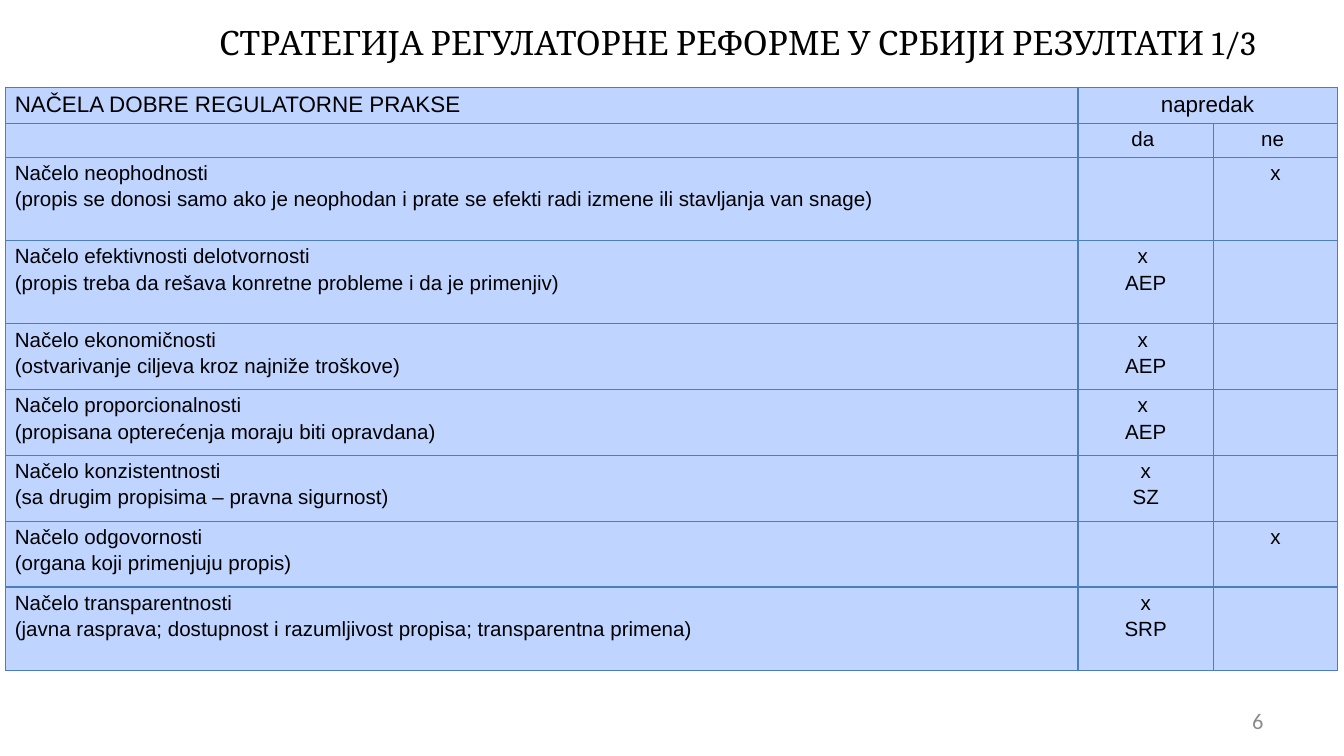
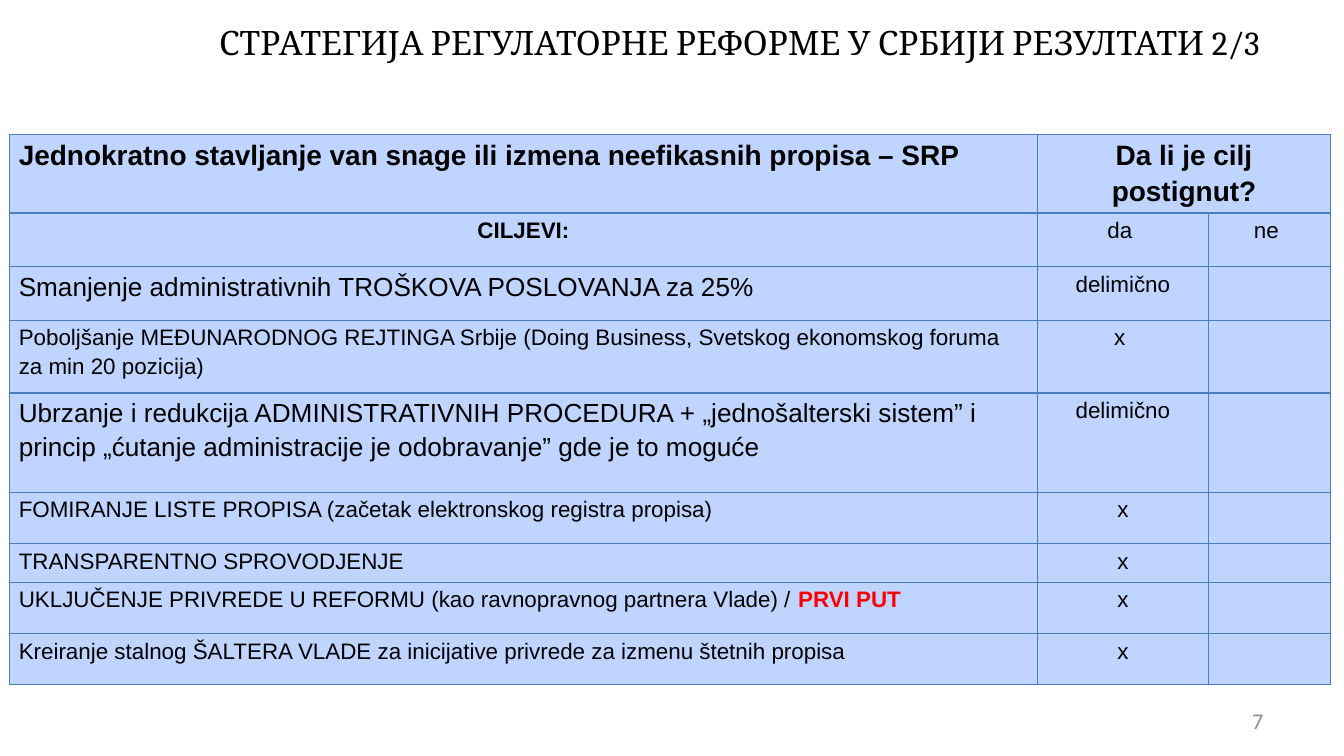
from dataclasses import dataclass
from lxml.etree import SubElement
from pptx import Presentation
from pptx.dml.color import RGBColor
from pptx.enum.text import MSO_ANCHOR, MSO_AUTO_SIZE, PP_ALIGN
from pptx.oxml import parse_xml
from pptx.oxml.ns import nsdecls, qn
from pptx.util import Inches, Pt

# Shared style
BLACK, GREY, RED = "000000", "8C8C8C", "FF0000"
CELL_FILL, BORDER = "BFD4FF", "4B7EBC"
TITLE_FONT, TABLE_FONT, NUMBER_FONT = "Cambria", "Arial", "Calibri"
TITLE = "СТРАТЕГИЈА РЕГУЛАТОРНЕ РЕФОРМЕ У СРБИЈИ РЕЗУЛТАТИ"


@dataclass
class Entry:
    """Text of one table cell; lines become paragraphs."""
    text: str = ""
    size: int = 12
    bold: bool = False
    centred: bool = True
    accent: str = ""


def colour(value):
    return RGBColor.from_string(value)


def set_font(font, name, size, value=BLACK, bold=False):
    font.name, font.size, font.bold = name, Pt(size), bold
    font.color.rgb = colour(value)


class DeckBuilder:
    def __init__(self):
        self.deck = Presentation()
        # Widescreen, 16:9
        self.deck.slide_width = Inches(10)
        self.deck.slide_height = Inches(10) * 9 // 16
        self.page = None

    def add_page(self, part, number):
        self.page = self.deck.slides.add_slide(self.deck.slide_layouts[5])
        self.add_title(f"{TITLE} {part}/3")
        self.add_number(number)

    def add_title(self, text):
        title = self.page.shapes.title
        title.left, title.top = Inches(1.53), Inches(0.11)
        title.width, title.height = Inches(8.83), Inches(0.83)
        frame = title.text_frame
        frame.text = text
        frame.auto_size = MSO_AUTO_SIZE.NONE
        frame.vertical_anchor = MSO_ANCHOR.TOP
        para = frame.paragraphs[0]
        para.alignment = PP_ALIGN.LEFT
        set_font(para.font, TITLE_FONT, 18)

    def add_number(self, number):
        box = self.page.shapes.add_textbox(
            Inches(7.17), Inches(5.21), Inches(2.33), Inches(0.3))
        frame = box.text_frame
        frame.word_wrap = True
        frame.vertical_anchor = MSO_ANCHOR.MIDDLE
        frame.text = str(number)
        para = frame.paragraphs[0]
        para.alignment = PP_ALIGN.RIGHT
        set_font(para.font, NUMBER_FONT, 12, GREY)

    def add_table(self, left, top, height, widths, heights, rows):
        frame = self.page.shapes.add_table(
            len(heights), len(widths), Inches(left), Inches(top),
            Inches(sum(widths)), Inches(height))
        table = frame.table
        table.first_row = table.horz_banding = False
        for column, width in zip(table.columns, widths):
            column.width = Inches(width)
        for row, row_height in zip(table.rows, heights):
            row.height = Inches(row_height)
        # Row changes reset the frame, so its height is set last
        frame.height = Inches(height)
        for r, entries in enumerate(rows):
            for c, entry in enumerate(entries):
                self.fill_cell(table.cell(r, c), entry)
        # The second heading spans both answer columns
        table.cell(0, 1).merge(table.cell(0, 2))

    def fill_cell(self, cell, entry):
        cell.margin_left = cell.margin_right = Inches(0.07)
        cell.margin_top, cell.margin_bottom = Inches(0.01), 0
        cell.fill.solid()
        cell.fill.fore_color.rgb = colour(CELL_FILL)
        self.add_borders(cell)
        cell.text_frame.text = entry.text
        for para in cell.text_frame.paragraphs:
            para.alignment = PP_ALIGN.CENTER if entry.centred else PP_ALIGN.LEFT
            para.line_spacing = 1.15
            set_font(para.font, TABLE_FONT, entry.size, bold=entry.bold)
        if entry.accent:
            span = para.add_run()
            span.text = entry.accent
            span.font.bold = True
            span.font.color.rgb = colour(RED)
        if not entry.text:
            # Keeps an empty cell from stretching its row
            SubElement(para._p, qn("a:endParaRPr"), sz=str(entry.size * 100))

    def add_borders(self, cell):
        properties = cell._tc.get_or_add_tcPr()
        for index, side in enumerate("LRTB"):
            properties.insert(index, parse_xml(
                f'<a:ln{side} {nsdecls("a")} w="{Pt(0.75)}"><a:solidFill>'
                f'<a:srgbClr val="{BORDER}"/></a:solidFill></a:ln{side}>'))


def answer_row(label, yes="", no="", size=12, label_size=None, accent=""):
    return [Entry(label, label_size or size, centred=False, accent=accent),
            Entry(yes, size), Entry(no, size)]


def principles_page(builder):
    builder.add_page(1, 6)
    principles = [
        ("Načelo neophodnosti\n(propis se donosi samo ako je neophodan i prate se "
         "efekti radi izmene ili stavljanja van snage)", "", "x"),
        ("Načelo efektivnosti delotvornosti\n(propis treba da rešava konretne "
         "probleme i da je primenjiv)", "x \nAEP", ""),
        ("Načelo ekonomičnosti\n(ostvarivanje ciljeva kroz najniže troškove)",
         "x \nAEP", ""),
        ("Načelo proporcionalnosti\n(propisana opterećenja moraju biti opravdana)",
         "x \nAEP", ""),
        ("Načelo konzistentnosti\n(sa drugim propisima – pravna sigurnost)",
         "x\nSZ", ""),
        ("Načelo odgovornosti\n(organa koji primenjuju propis)", "", "x"),
        ("Načelo transparentnosti\n(javna rasprava; dostupnost i razumljivost "
         "propisa; transparentna primena)", "x\nSRP", ""),
    ]
    rows = [
        [Entry("NAČELA DOBRE REGULATORNE PRAKSE", centred=False),
         Entry("napredak"), Entry()],
        answer_row("", "da ", "ne ", size=11),
        *(answer_row(*principle, size=11) for principle in principles),
    ]
    heights = [0.27, 0.25, 0.62, 0.62, *[0.49] * 4, 0.62]
    builder.add_table(0.04, 0.65, 4.33, [7.98, 1.01, 0.92], heights, rows)


def goals_page(builder):
    builder.add_page(2, 7)
    rows = [
        [Entry("Jednokratno stavljanje van snage ili izmena neefikasnih propisa – SRP",
               15, True, False),
         Entry("Da li je cilj postignut?", 15, True), Entry()],
        [Entry("CILJEVI:", bold=True), Entry("da "), Entry("ne ")],
        answer_row("Smanjenje administrativnih TROŠKOVA POSLOVANJA za 25%",
                   "delimično", label_size=14),
        answer_row("Poboljšanje MEĐUNARODNOG REJTINGA Srbije (Doing Business, "
                   "Svetskog ekonomskog foruma za min 20 pozicija)", "x "),
        answer_row("Ubrzanje i redukcija ADMINISTRATIVNIH PROCEDURA + "
                   "„jednošalterski sistem” i princip „ćutanje administracije je "
                   "odobravanje” gde je to moguće", "delimično", label_size=14),
        answer_row("FOMIRANJE LISTE PROPISA (začetak elektronskog registra propisa)",
                   "x"),
        answer_row("TRANSPARENTNO SPROVODJENJE", "x"),
        answer_row("UKLJUČENJE PRIVREDE U REFORMU (kao ravnopravnog partnera Vlade) / ",
                   "x", accent="PRVI PUT"),
        answer_row("Kreiranje stalnog ŠALTERA VLADE za inicijative privrede za "
                   "izmenu štetnih propisa", "x"),
    ]
    heights = [*[0.4] * 3, 0.54, 0.74, 0.38, 0.29, 0.38, 0.38]
    builder.add_table(0.07, 1, 3.89, [7.65, 1.27, 0.91], heights, rows)


def main():
    builder = DeckBuilder()
    principles_page(builder)
    goals_page(builder)
    builder.deck.save("out.pptx")


if __name__ == "__main__":
    main()
